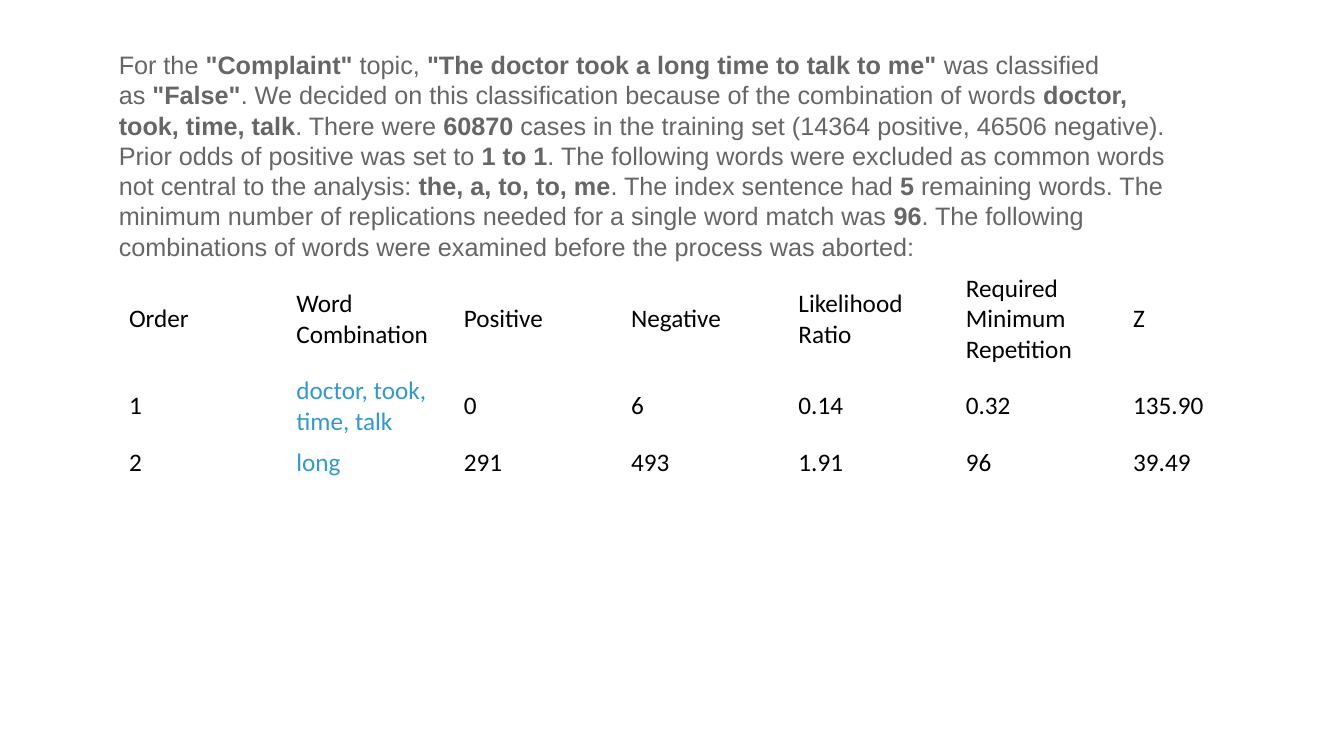
from pptx import Presentation
from pptx.dml.color import RGBColor as RGB
from pptx.enum.text import MSO_ANCHOR as Anchor, MSO_AUTO_SIZE as Fit
from pptx.util import Inches, Pt

INTRO = [
    ("For the ", False),
    ('"Complaint"', True),
    (" topic, ", False),
    ('"The doctor took a long time to talk to me"', True),
    (" was classified as ", False),
    ('"False"', True),
    (". We decided on this classification because of the combination of words ", False),
    ("doctor, took, time, talk", True),
    (". There were ", False),
    ("60870", True),
    (" cases in the training set (14364 positive, 46506 negative). "
     "Prior odds of positive was set to ", False),
    ("1 to 1", True),
    (". The following words were excluded as common words not central to the analysis: ", False),
    ("the, a, to, to, me", True),
    (". The index sentence had ", False),
    ("5", True),
    (" remaining words. The minimum number of replications needed "
     "for a single word match was ", False),
    ("96", True),
    (". The following combinations of words were examined before the process was aborted:", False),
]
ROWS = [
    ("Order", "Word Combination", "Positive", "Negative", "Likelihood Ratio",
     "Required Minimum Repetition", "Z"),
    ("1", "doctor, took, time, talk", "0", "6", "0.14", "0.32", "135.90"),
    ("2", "long", "291", "493", "1.91", "96", "39.49"),
]
HEIGHTS = (1.01, 0.7, 0.4)
WIDTH = 1.66
WORDS = 1
BLACK = RGB(0, 0, 0)
WHITE = RGB(255, 255, 255)
GRAY = RGB(0x66, 0x66, 0x66)
BLUE = RGB(0x33, 0x99, 0xCC)
HARD = chr(160)


def style(font, name, color, bold=False):
    """Set face, colour and weight at the slide's one text size."""
    font.name, font.size, font.bold = name, Pt(18), bold
    font.color.rgb = color


def bind(text):
    """Turn a space at either end into a non-breaking one."""
    head = HARD if text.startswith(" ") else ""
    tail = HARD if text.endswith(" ") else ""
    return head + text.strip() + tail


def add_intro(slide):
    """Add the paragraph that explains the classification."""
    box = slide.shapes.add_textbox(Inches(1.08), Inches(0.43), Inches(10.77), Inches(2.22))
    frame = box.text_frame
    frame.word_wrap = True
    frame.auto_size = Fit.SHAPE_TO_FIT_TEXT
    frame.vertical_anchor = Anchor.MIDDLE
    for text, bold in INTRO:
        run = frame.paragraphs[0].add_run()
        run.text = bind(text)
        style(run.font, "Arial", GRAY, bold)


def add_grid(slide):
    """Add the table of word combinations."""
    count = len(ROWS[0])
    table = slide.shapes.add_table(
        len(ROWS), count, Inches(1.18), Inches(2.66),
        Inches(WIDTH * count), Inches(sum(HEIGHTS))).table
    table.horz_banding = False
    for col in table.columns:
        col.width = Inches(WIDTH)
    for r, (row, height) in enumerate(zip(ROWS, HEIGHTS)):
        table.rows[r].height = Inches(height)
        for c, text in enumerate(row):
            cell = table.cell(r, c)
            cell.fill.solid()
            cell.fill.fore_color.rgb = WHITE
            cell.vertical_anchor = Anchor.MIDDLE
            cell.text_frame.text = text
            color = BLUE if r and c == WORDS else BLACK
            style(cell.text_frame.paragraphs[0].runs[0].font, "Calibri", color)


def main():
    """Build and save the slide."""
    deck = Presentation()
    deck.slide_width, deck.slide_height = Inches(13.33), Inches(7.5)
    slide = deck.slides.add_slide(deck.slide_layouts[6])
    add_grid(slide)
    add_intro(slide)
    deck.save("out.pptx")


if __name__ == "__main__":
    main()
